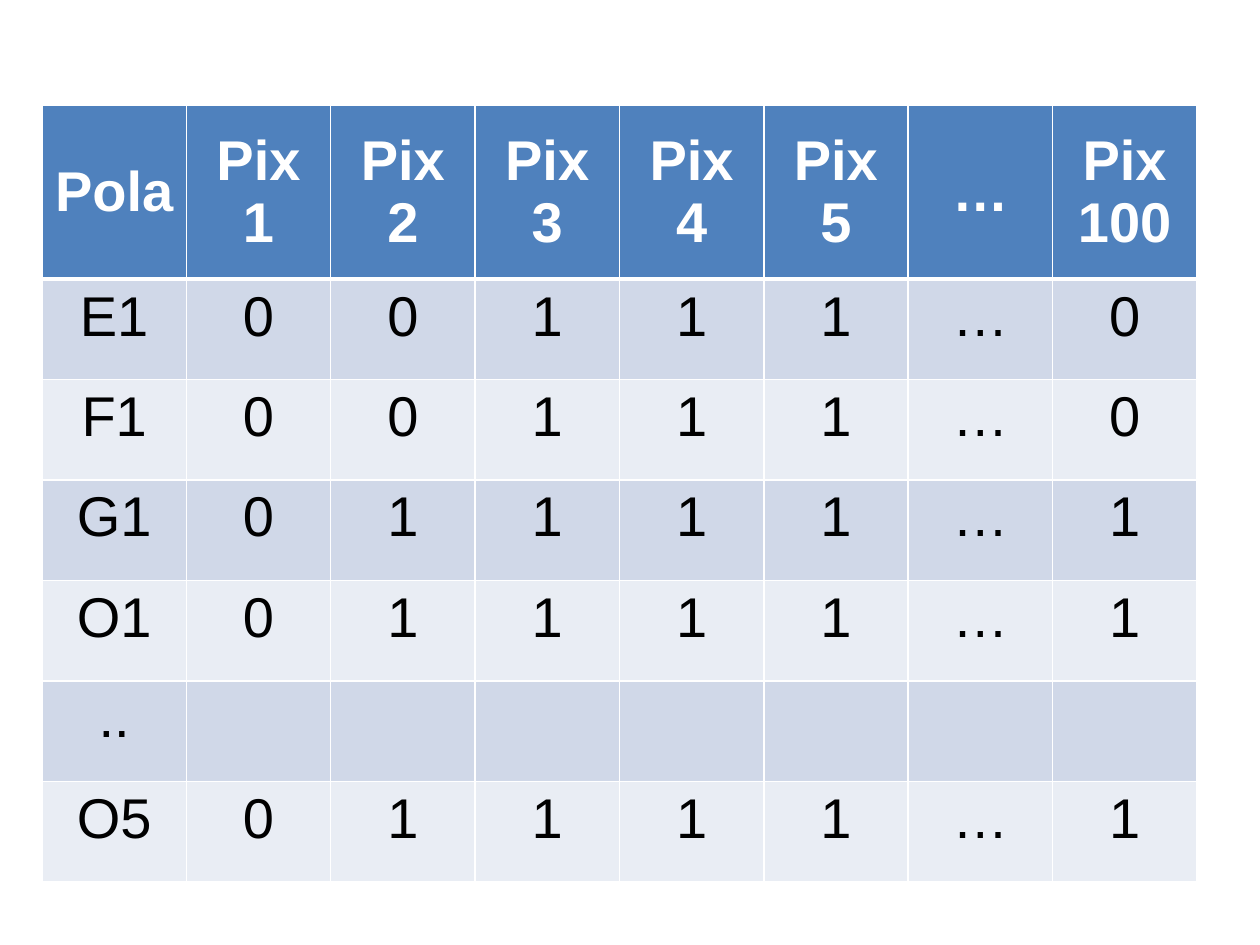
"""Build a slide with a table of pixel values for each field."""
from typing import NamedTuple

from lxml.etree import SubElement
from pptx import Presentation
from pptx.dml.color import RGBColor
from pptx.enum.text import MSO_ANCHOR, PP_ALIGN
from pptx.oxml.ns import qn
from pptx.table import _Cell
from pptx.util import Emu, Pt

COLORS = {
    "header": "4F81BD",
    "odd_row": "D0D8E8",
    "even_row": "E9EDF4",
    "rule": "FFFFFF",
    "header_text": "FFFFFF",
    "body_text": "000000",
}
PX_PER_INCH = 126
HEADER_HEIGHT, BODY_HEIGHT = 174, 603
TABLE_LEFT, TABLE_TOP, TABLE_WIDTH = 42, 105, 1155
THIN, THICK = 1, 3


class RowStyle(NamedTuple):
    fill: str
    text: str
    bold: bool
    anchor: MSO_ANCHOR
    top_rule: int
    bottom_rule: int


HEADER = RowStyle("header", "header_text", True, MSO_ANCHOR.MIDDLE, THIN, THICK)
FIRST = RowStyle("odd_row", "body_text", False, MSO_ANCHOR.TOP, THICK, THIN)
ODD = FIRST._replace(top_rule=THIN)
EVEN = ODD._replace(fill="even_row")

FIELDS = [
    (HEADER, ["Pola", "Pix\n1", "Pix\n2", "Pix\n3", "Pix\n4", "Pix\n5", "…", "Pix\n100"]),
    (FIRST, ["E1", "0", "0", "1", "1", "1", "…", "0"]),
    (EVEN, ["F1", "0", "0", "1", "1", "1", "…", "0"]),
    (ODD, ["G1", "0", "1", "1", "1", "1", "…", "1"]),
    (EVEN, ["O1", "0", "1", "1", "1", "1", "…", "1"]),
    (ODD, ["..", "", "", "", "", "", "", ""]),
    (EVEN, ["O5", "0", "1", "1", "1", "1", "…", "1"]),
]


def px(length: int) -> Emu:
    """Convert pixels to EMU."""
    return Emu(round(length * 914400 / PX_PER_INCH))


def draw_rules(cell: _Cell, style: RowStyle) -> None:
    """Draw the four borders of a cell."""
    widths = {"lnL": THIN, "lnR": THIN, "lnT": style.top_rule, "lnB": style.bottom_rule}
    properties = cell._tc.get_or_add_tcPr()
    for side, width in widths.items():
        rule = SubElement(properties, qn(f"a:{side}"), w=str(Pt(width)))
        solid = SubElement(rule, qn("a:solidFill"))
        SubElement(solid, qn("a:srgbClr"), val=COLORS["rule"])


def fill_cell(cell: _Cell, value: str, style: RowStyle) -> None:
    """Write and format one cell."""
    draw_rules(cell, style)
    cell.fill.solid()
    cell.fill.fore_color.rgb = RGBColor.from_string(COLORS[style.fill])
    layout = {
        "margin_left": 0,
        "margin_right": 0,
        "margin_top": Pt(3.6),
        "margin_bottom": Pt(3.6),
        "vertical_anchor": style.anchor,
        "text": value,
    }
    for name, setting in layout.items():
        setattr(cell, name, setting)
    lettering = {"name": "Arial", "size": Pt(32), "bold": style.bold}
    for paragraph in cell.text_frame.paragraphs:
        paragraph.alignment = PP_ALIGN.CENTER
        for run in paragraph.runs:
            for name, setting in lettering.items():
                setattr(run.font, name, setting)
            run.font.color.rgb = RGBColor.from_string(COLORS[style.text])


def main() -> None:
    """Build and save the presentation."""
    presentation = Presentation()
    presentation.slide_width, presentation.slide_height = px(1260), px(945)
    slide = presentation.slides.add_slide(presentation.slide_layouts[6])
    pixels = slide.shapes.add_table(
        len(FIELDS), len(FIELDS[0][1]), px(TABLE_LEFT), px(TABLE_TOP),
        px(TABLE_WIDTH), px(HEADER_HEIGHT + BODY_HEIGHT),
    ).table
    for column in pixels.columns:
        column.width = px(TABLE_WIDTH) // len(pixels.columns)
    for row, (style, values) in zip(pixels.rows, FIELDS):
        row.height = px(HEADER_HEIGHT) if style is HEADER else px(BODY_HEIGHT) // (len(FIELDS) - 1)
        for cell, value in zip(row.cells, values):
            fill_cell(cell, value, style)
    presentation.save("out.pptx")


if __name__ == "__main__":
    main()
